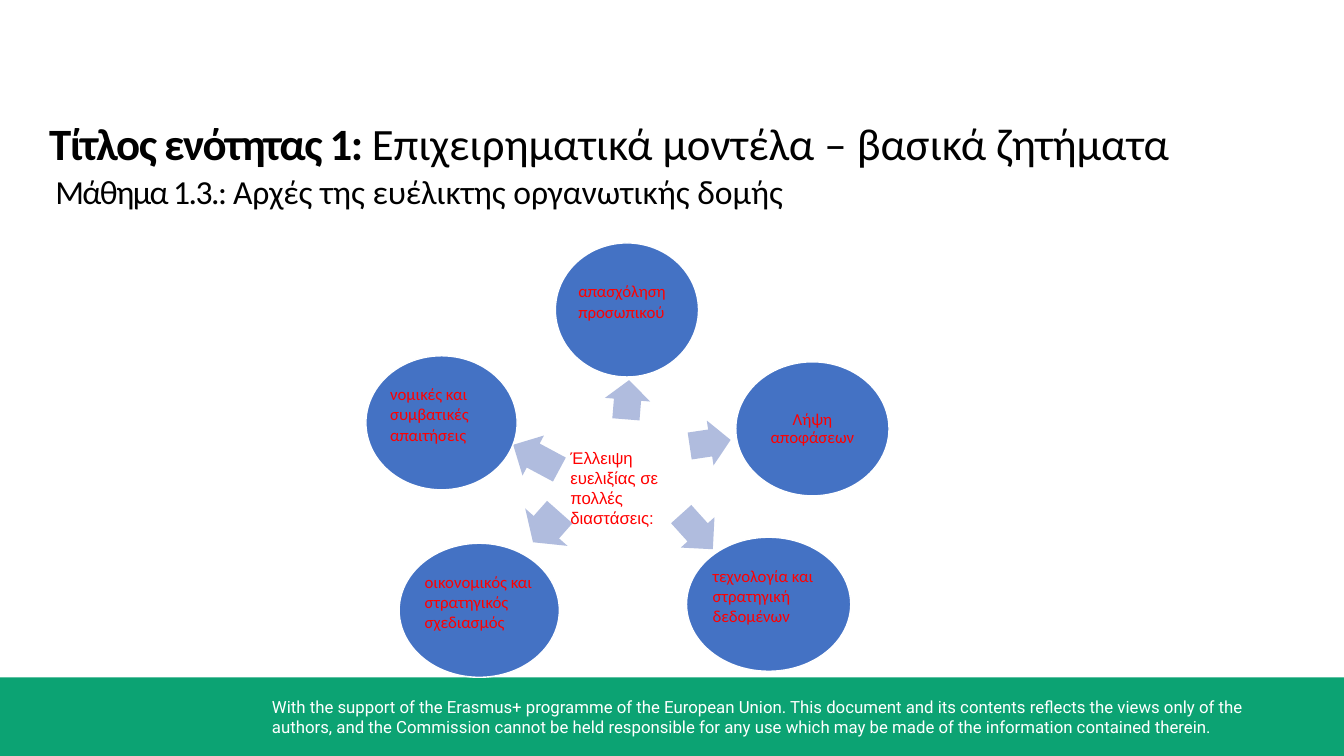
from dataclasses import dataclass
from math import sqrt

from pptx import Presentation
from pptx.dml.color import RGBColor as RGB
from pptx.enum.shapes import MSO_SHAPE as Shp
from pptx.enum.text import MSO_ANCHOR as Anchor, PP_ALIGN as Align
from pptx.util import Emu, Inches, Pt


@dataclass(frozen=True)
class Theme:
    green: RGB = RGB(0x0C, 0xA3, 0x73)
    blue: RGB = RGB(0x44, 0x72, 0xC4)
    pale: RGB = RGB(0xB0, 0xBC, 0xDE)
    red: RGB = RGB(0xFF, 0, 0)
    white: RGB = RGB(0xFF, 0xFF, 0xFF)
    black: RGB = RGB(0, 0, 0)
    body: str = "Calibri"
    label: str = "Arial"
    footer: str = "Roboto"
    title_pt: int = 32
    lesson_pt: int = 24
    small_pt: int = 12


@dataclass(frozen=True)
class Box:
    x: float
    y: float
    w: float
    h: float

    def emu(self) -> tuple[Emu, Emu, Emu, Emu]:
        return (Emu(int(W * self.x / 100)), Emu(int(H * self.y / 100)),
                Emu(int(W * self.w / 100)), Emu(int(H * self.h / 100)))


@dataclass(frozen=True)
class Topic:
    text: str
    cx: float
    cy: float
    w: float
    align: Align = Align.LEFT
    spacing: float = 1.0
    lift: float = 0.17


@dataclass(frozen=True)
class Arrow:
    cx: float
    cy: float
    w: float
    h: float
    angle: float


T = Theme()
W, H = Inches(13.33), Inches(7.5)
CIRCLE_H = 17.73

TOPICS = [
    Topic("απασχόληση προσωπικού", 46.65, 41, 10.65),
    Topic("Λήψη αποφάσεων", 60.45, 56.73, 11.4, Align.CENTER, 0.9, 0),
    Topic("τεχνολογία και στρατηγική δεδομένων", 57.19, 79.93, 12.22),
    Topic("οικονομικός και στρατηγικός σχεδιασμός", 35.66, 80.73, 11.92),
    Topic("νομικές και συμβατικές απαιτήσεις", 32.85, 55.93, 11.25),
]
ARROWS = [
    Arrow(52.84, 58.6, 3.08, 6, 351.5),
    Arrow(51.86, 70.33, 3.52, 6, 48),
    Arrow(40.65, 69.73, 3, 7.47, 131.5),
    Arrow(39.9, 60.47, 3.9, 6, 208.2),
    Arrow(46.69, 52.87, 2.93, 6, 274.6),
]
HEADINGS = [
    (T.title_pt, True, 0.01, "Τίτλος ενότητας 1: ",
     "Επιχειρηματικά μοντέλα – βασικά ζητήματα"),
    (T.lesson_pt, False, 0.07, "Μάθημα 1.3.: ",
     "Αρχές της ευέλικτης οργανωτικής δομής"),
]


def centred(cx: float, cy: float, w: float, h: float) -> Box:
    return Box(cx - w / 2, cy - h / 2, w, h)


def add_shape(s, kind: Shp, box: Box, fill: RGB, line: RGB | None = None):
    sp = s.shapes.add_shape(kind, *box.emu())
    sp.shadow.inherit = False
    sp.fill.solid()
    sp.fill.fore_color.rgb = fill
    if line is None:
        sp.line.fill.background()
    else:
        sp.line.color.rgb = line
        sp.line.width = Pt(1)
    return sp


def add_frame(s, box: Box):
    tf = s.shapes.add_textbox(*box.emu()).text_frame
    tf.word_wrap = True
    return tf


def add_run(p, text: str, size: int, font: str, color: RGB, bold: bool = False):
    r = p.add_run()
    r.text = text
    r.font.size = Pt(size)
    r.font.name = font
    r.font.bold = bold
    r.font.color.rgb = color
    return r


def add_headings(s) -> None:
    tf = add_frame(s, Box(2.85, 14.67, 96.45, 14.13))
    for i, (size, bold, indent, lead, rest) in enumerate(HEADINGS):
        p = tf.add_paragraph() if i else tf.paragraphs[0]
        if i:
            p.space_before = Pt(1.1)
        p._p.get_or_add_pPr().set("marL", str(Inches(indent)))
        r = add_run(p, lead, size, T.body, T.black, bold)
        r._r.get_or_add_rPr().set("spc", "-110")
        add_run(p, rest, size, T.body, T.black)


def add_arrow(s, a: Arrow) -> None:
    sp = add_shape(s, Shp.RIGHT_ARROW, centred(a.cx, a.cy, a.w, a.h), T.pale)
    sp.adjustments[0] = 0.6
    sp.adjustments[1] = 0.5
    sp.rotation = a.angle


def add_topic(s, t: Topic) -> None:
    add_shape(s, Shp.OVAL, centred(t.cx, t.cy, t.w, CIRCLE_H), T.blue, T.white)
    tf = add_frame(s, centred(t.cx, t.cy, t.w / sqrt(2), CIRCLE_H / sqrt(2)))
    tf.margin_left = tf.margin_right = tf.margin_top = Inches(0.02)
    tf.margin_bottom = Inches(0.02 + t.lift)
    tf.vertical_anchor = Anchor.MIDDLE
    p = tf.paragraphs[0]
    p.alignment = t.align
    p.line_spacing = t.spacing
    add_run(p, t.text, T.small_pt, T.body, T.red)


def add_centre_label(s) -> None:
    p = add_frame(s, Box(41.7, 58.53, 9.98, 16)).paragraphs[0]
    p.line_spacing = Pt(14.3)
    add_run(p, "Έλλειψη ευελιξίας σε πολλές διαστάσεις:",
            T.small_pt, T.label, T.red)


def add_footer(s) -> None:
    add_shape(s, Shp.RECTANGLE, Box(0, 89.6, 100, 10.4), T.green)
    p = add_frame(s, Box(19.5, 91.47, 78.15, 6.67)).paragraphs[0]
    add_run(p, "With the support of the Erasmus+ programme of the European Union. "
            "This document and its contents reflects the views only of the authors, "
            "and the Commission cannot be held responsible for any use which may be "
            "made of the information contained therein.",
            T.small_pt, T.footer, T.white)


def main() -> None:
    prs = Presentation()
    prs.slide_width, prs.slide_height = W, H
    s = prs.slides.add_slide(prs.slide_layouts[6])
    add_footer(s)
    add_headings(s)
    for a in ARROWS:
        add_arrow(s, a)
    for t in TOPICS:
        add_topic(s, t)
    add_centre_label(s)
    prs.save("out.pptx")


if __name__ == "__main__":
    main()
